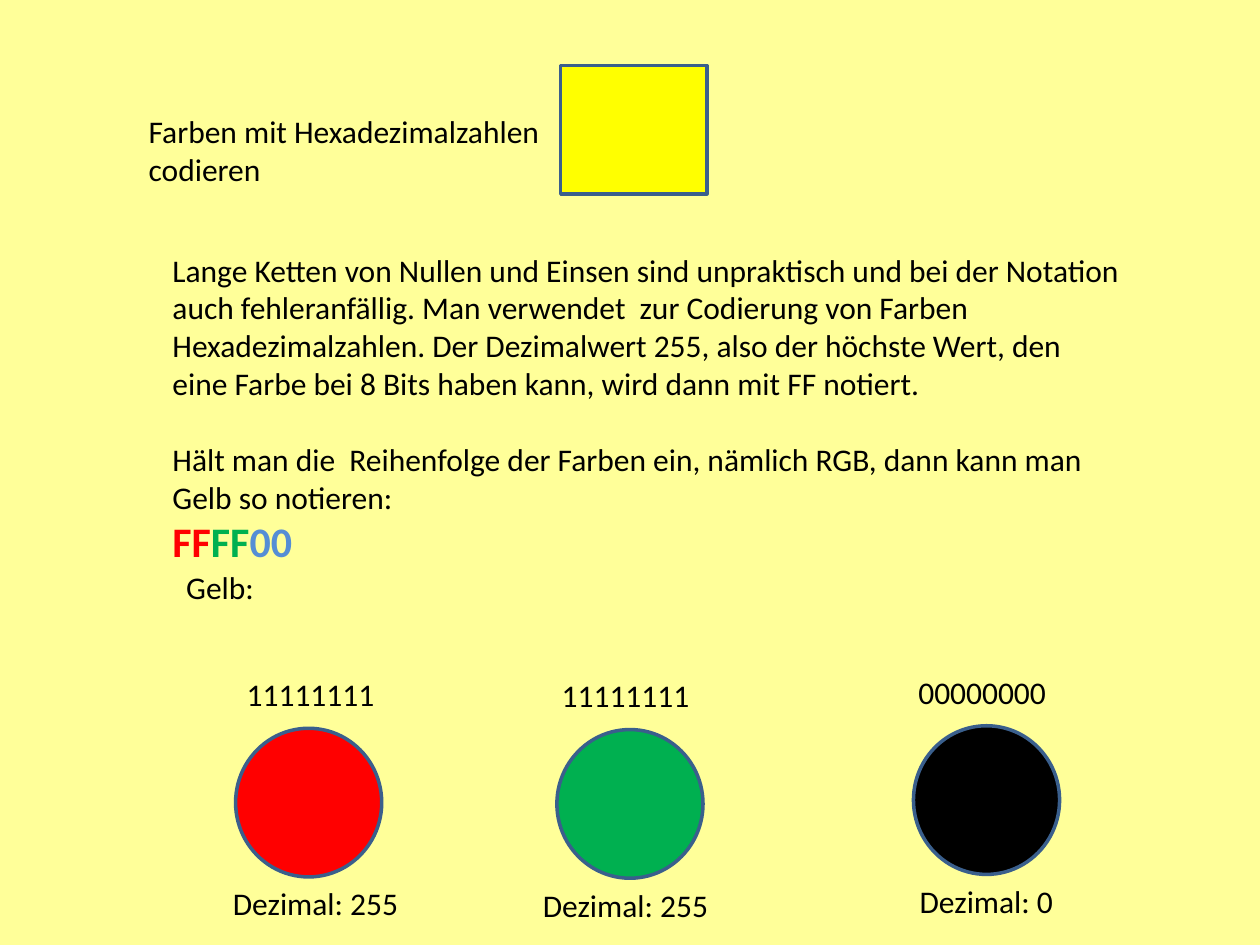
from pptx import Presentation
from pptx.dml.color import RGBColor
from pptx.enum import shapes, text
from pptx.util import Inches, Pt

THEME = {
    "font": "Calibri", "body_size": 18, "code_size": 24, "line_width": 2,
    "background": "FFFF99", "ink": "000000", "outline": "3A5F8C",
    "red": "FF0000", "green": "00B050", "blue": "558ED5",
    "black": "000000", "yellow": "FFFF00",
}

TITLE = ["Farben mit Hexadezimalzahlen ", "codieren"]
EXPLANATION = [
    "Lange Ketten von Nullen und Einsen sind unpraktisch und bei der Notation\v"
    "auch fehleranfällig. Man verwendet  zur Codierung von Farben \v"
    "Hexadezimalzahlen. Der Dezimalwert 255, also der höchste Wert, den\v"
    "eine Farbe bei 8 Bits haben kann, wird dann mit FF notiert. ",
    "Hält man die  Reihenfolge der Farben ein, nämlich RGB, dann kann man \v"
    "Gelb so notieren:",
]
HEX_CODE = [("FF", "red"), ("FF", "green"), ("00", "blue")]
RESULT = "Gelb:"

# colour, circle left and top, (bits, left), (decimal value, left, width)
CHANNELS = [
    ("red", 1.87, 5.78, ("11111111", 1.86), ("Dezimal: 255", 1.75, 1.51)),
    ("green", 4.42, 5.79, ("11111111", 4.36), ("Dezimal: 255", 4.21, 1.51)),
    ("black", 7.25, 5.76, ("00000000", 7.19), ("Dezimal: 0", 7.2, 1.25)),
]
CIRCLE_WIDTH, CIRCLE_HEIGHT = 1.16, 1.18
LABEL_HEIGHT = 0.4
BITS_WIDTH, BITS_RISE = 1.21, 0.47


def color(name):
    return RGBColor.from_string(THEME[name])


def style_run(run, size="body_size", ink="ink", bold=False):
    run.font.name = THEME["font"]
    run.font.size = Pt(THEME[size])
    run.font.color.rgb = color(ink)
    run.font.bold = bold


def write(frame, paragraphs):
    frame.text = "\n".join(paragraphs)
    frame.word_wrap = False
    frame.auto_size = text.MSO_AUTO_SIZE.NONE
    frame.vertical_anchor = text.MSO_ANCHOR.TOP
    for paragraph in frame.paragraphs:
        paragraph.alignment = text.PP_ALIGN.LEFT
        paragraph.space_before = Pt(0)
        for run in paragraph.runs:
            style_run(run)


def add_label(slide, wording, *box):
    label = slide.shapes.add_textbox(*map(Inches, box))
    write(label.text_frame, [wording])


def add_swatch(slide, kind, fill, *box):
    swatch = slide.shapes.add_shape(kind, *map(Inches, box))
    swatch.shadow.inherit = False
    swatch.fill.solid()
    swatch.fill.fore_color.rgb = color(fill)
    swatch.line.color.rgb = color("outline")
    swatch.line.width = Pt(THEME["line_width"])


def add_title(slide):
    title = slide.shapes.title
    title.left, title.top, title.width, title.height = map(
        Inches, (1.08, 0.84, 3.35, 0.7))
    write(title.text_frame, TITLE)


def add_explanation(slide):
    box = slide.shapes.add_textbox(*map(Inches, (1.27, 1.94, 7.72, 2.6)))
    frame = box.text_frame
    write(frame, EXPLANATION)
    frame.paragraphs[1].space_before = Pt(22)
    code = frame.add_paragraph()
    for digits, ink in HEX_CODE:
        run = code.add_run()
        run.text = digits
        style_run(run, "code_size", ink, bold=True)


def main():
    prs = Presentation()
    prs.slide_width, prs.slide_height = Inches(10), Inches(7.5)
    slide = prs.slides.add_slide(prs.slide_layouts.get_by_name("Title Only"))
    slide.background.fill.solid()
    slide.background.fill.fore_color.rgb = color("background")

    add_title(slide)
    add_explanation(slide)
    add_swatch(slide, shapes.MSO_SHAPE.RECTANGLE, "yellow",
               4.45, 0.52, CIRCLE_WIDTH, 1.02)
    add_label(slide, RESULT, 1.38, 4.46, 0.74, LABEL_HEIGHT)

    for fill, left, top, (bits, bits_left), (value, value_left, width) in CHANNELS:
        add_swatch(slide, shapes.MSO_SHAPE.OVAL, fill,
                   left, top, CIRCLE_WIDTH, CIRCLE_HEIGHT)
        add_label(slide, bits, bits_left, top - BITS_RISE,
                  BITS_WIDTH, LABEL_HEIGHT)
        add_label(slide, value, value_left, top + CIRCLE_HEIGHT + 0.01,
                  width, LABEL_HEIGHT)

    prs.save("out.pptx")


if __name__ == "__main__":
    main()
